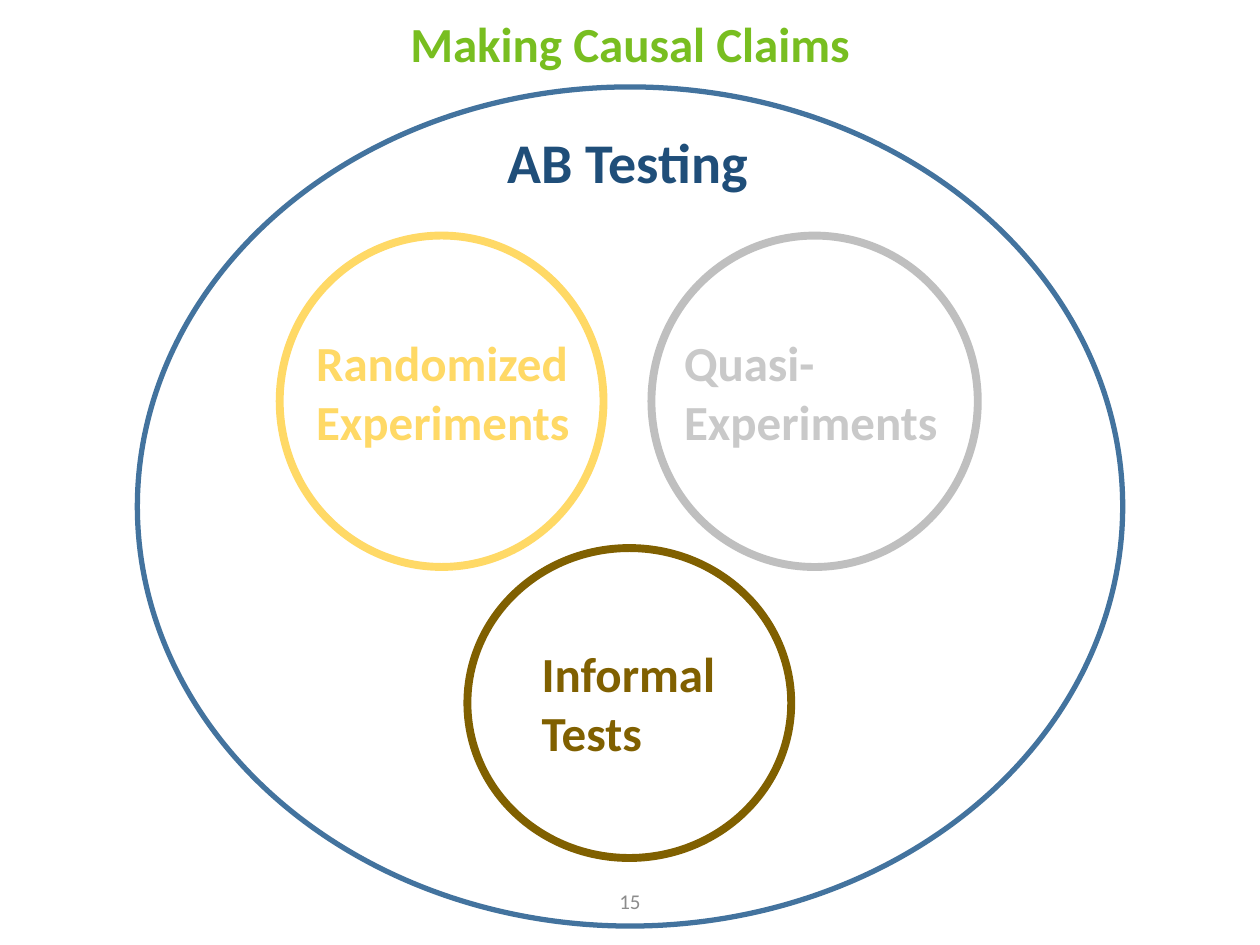
import pptx
import pptx.util
import pptx.dml.color
import pptx.enum.shapes
import pptx.enum.text

ALIGN = pptx.enum.text.PP_ALIGN
ANCHOR = pptx.enum.text.MSO_ANCHOR
SLIDE_BOX = (0, 0, pptx.util.Inches(10), pptx.util.Inches(7.5))
METHODS = [
    (["Randomized", "Experiments"], "FFD966", "FFD966",
     (22.2, 24.93, 25.7, 35.07), (7.4, 27.4, 87.2, 39.5)),
    (["Quasi-", "Experiments"], "BFBFBF", "C9C9C9",
     (51.7, 24.93, 25.9, 35.07), (6.2, 27.4, 86.5, 39.5)),
    (["Informal", "Tests"], "806000", "806000",
     (37.1, 58, 25.7, 32.8), (19.1, 28.9, 61.9, 42.3)),
]


def color(value):
    """Turn a hex string into a colour."""
    return pptx.dml.color.RGBColor.from_string(value)


def inside(box, shares):
    """Return the part of a box given by percentages of its width and height."""
    left, top, width, height = box
    x, y, w, h = (share / 100 for share in shares)
    return (int(left + x * width), int(top + y * height),
            int(w * width), int(h * height))


def write(frame, lines, size, ink, bold=True, align=ALIGN.LEFT):
    """Fill a text frame with one paragraph for each line."""
    for index, line in enumerate(lines):
        paragraph = frame.add_paragraph() if index else frame.paragraphs[0]
        paragraph.alignment = align
        run = paragraph.add_run()
        run.text = line
        run.font.name = "Calibri"
        run.font.size = pptx.util.Pt(size)
        run.font.bold = bold
        run.font.color.rgb = color(ink)


def add_ring(slide, box, ink, weight):
    """Draw an unfilled ellipse that fills the box."""
    ring = slide.shapes.add_shape(pptx.enum.shapes.MSO_SHAPE.OVAL, *box)
    ring.shadow.inherit = False
    ring.fill.background()
    ring.line.color.rgb = color(ink)
    ring.line.width = pptx.util.Pt(weight)


def add_label(slide, box, lines, size, ink):
    """Place a bold unwrapped label in the box."""
    frame = slide.shapes.add_textbox(*box).text_frame
    frame.word_wrap = False
    frame.auto_size = pptx.enum.text.MSO_AUTO_SIZE.SHAPE_TO_FIT_TEXT
    write(frame, lines, size, ink)


def add_title(slide, box):
    """Move and format the title placeholder."""
    title = slide.shapes.title
    title.left, title.top, title.width, title.height = box
    frame = title.text_frame
    frame.vertical_anchor = ANCHOR.MIDDLE
    write(frame, ["Making Causal Claims"], 28, "78BE20", align=ALIGN.CENTER)
    frame.paragraphs[0].line_spacing = 0.9


def add_page_number(slide, box):
    """Place the page number in the box."""
    frame = slide.shapes.add_textbox(*box).text_frame
    frame.word_wrap = True
    frame.vertical_anchor = ANCHOR.MIDDLE
    write(frame, ["15"], 12, "8C8C8C", bold=False, align=ALIGN.CENTER)


def add_testing_diagram(slide, box):
    """Draw the outer ellipse with its heading and the three methods."""
    add_ring(slide, inside(box, (10.9, 9.2, 78.2, 88.8)), "43739E", 3)
    for _, outline, _, circle, _ in METHODS:
        add_ring(slide, inside(box, circle), outline, 4.5)
    add_label(slide, inside(box, (39.3, 12.8, 21.3, 8.53)),
              ["AB Testing"], 32, "1F4E79")
    for lines, _, ink, circle, label in METHODS:
        add_label(slide, inside(inside(box, circle), label), lines, 28, ink)


def main():
    """Build the slide and save it."""
    deck = pptx.Presentation()
    deck.slide_width, deck.slide_height = SLIDE_BOX[2:]
    slide = deck.slides.add_slide(deck.slide_layouts[5])
    add_page_number(slide, inside(SLIDE_BOX, (33.1, 92.67, 33.8, 5.33)))
    add_testing_diagram(slide, SLIDE_BOX)
    add_title(slide, inside(SLIDE_BOX, (6.9, -0.13, 86.2, 10.13)))
    deck.save("out.pptx")


if __name__ == "__main__":
    main()
